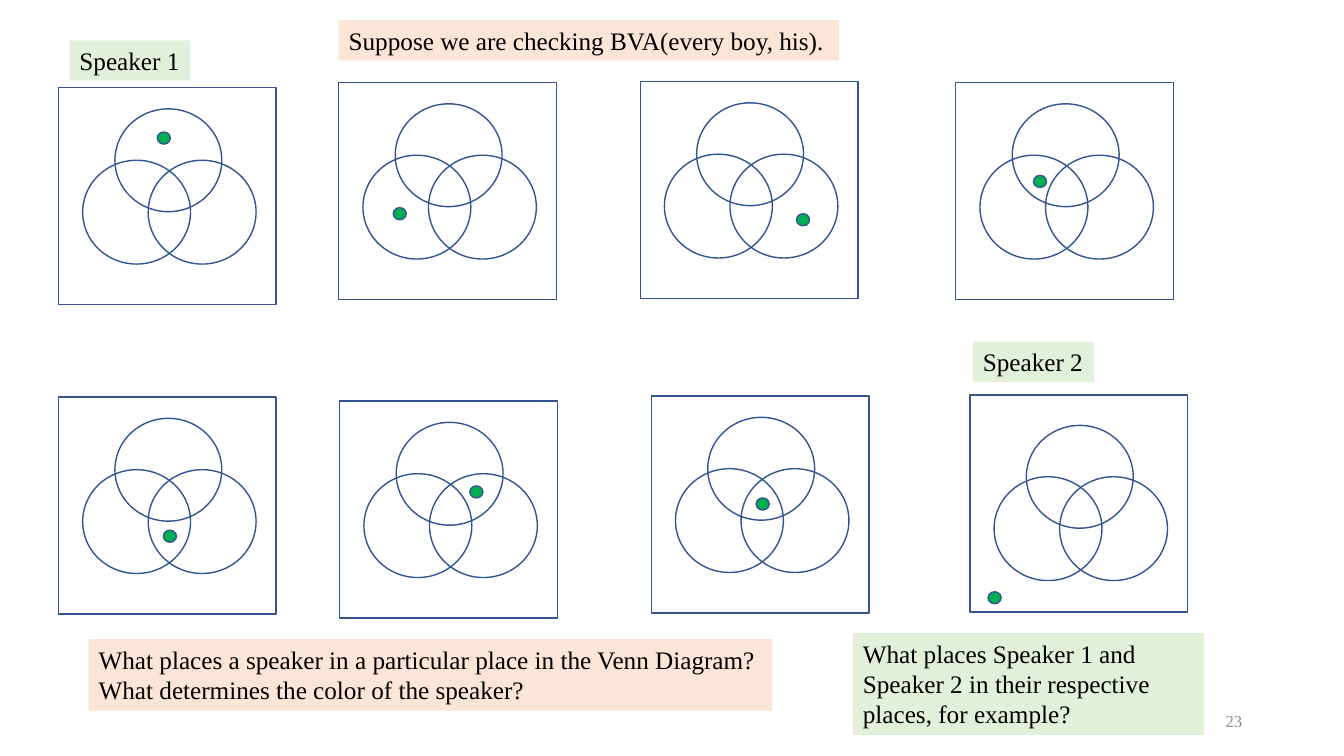
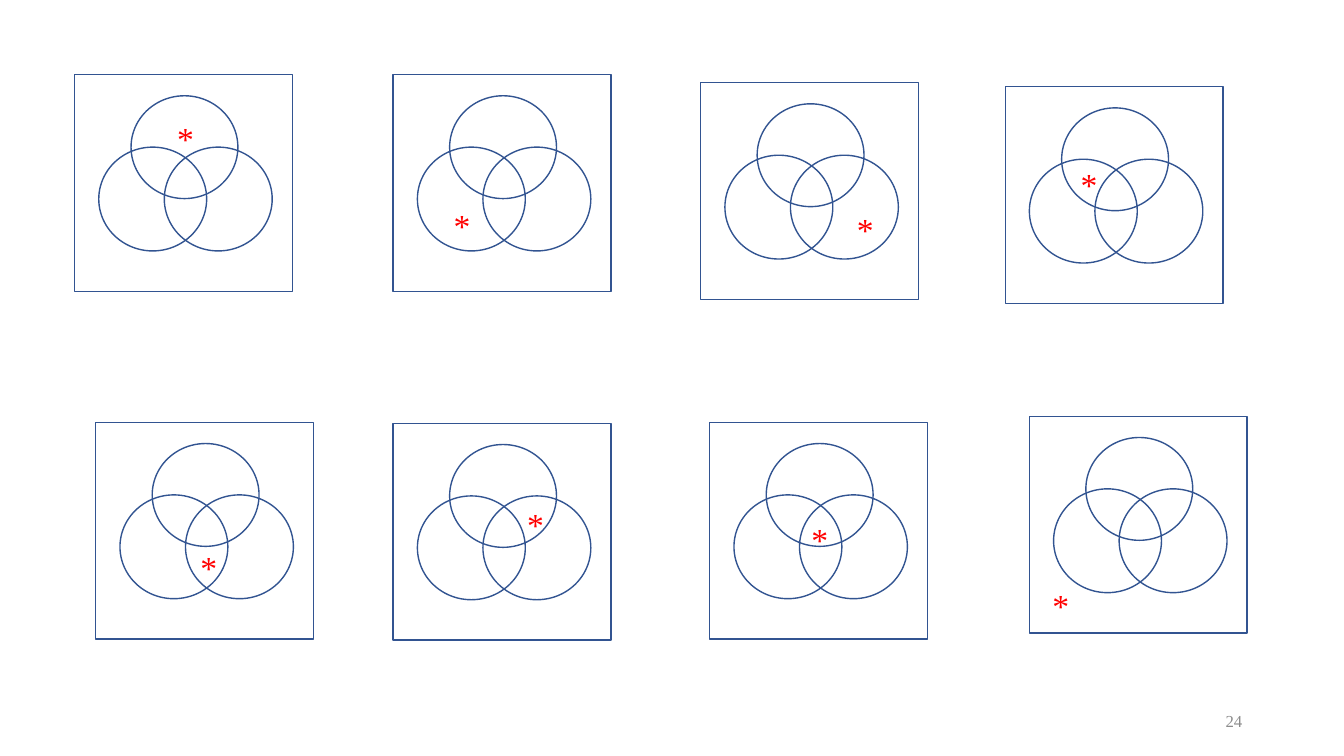
from pptx import Presentation
from pptx.dml.color import RGBColor
from pptx.enum import shapes, text
from pptx.util import Inches, Pt

COLOURS = {
    "outline": "325491",
    "dot": "00B050",
    "star": "FF0000",
    "ink": "000000",
    "number": "8C8C8C",
    "peach": "FBE5D6",
    "mint": "E2F0D9",
}
FONT = "Times New Roman"
FRAME_SIZE = (2.16, 2.15)
CIRCLES = [(0.24, 0.72, 1.07, 1.03), (0.56, 0.21, 1.06, 1.02), (0.89, 0.72, 1.07, 1.03)]
DOT_SIZE = (0.13, 0.12)
STAR_SIZE = (0.37, 0.5)


def add_outline(parent, preset, box, fill=None):
    outline = parent.add_shape(preset, *map(Inches, box))
    outline.shadow.inherit = False
    outline.line.color.rgb = RGBColor.from_string(COLOURS["outline"])
    outline.line.width = Pt(1)
    if fill:
        outline.fill.solid()
        outline.fill.fore_color.rgb = RGBColor.from_string(COLOURS[fill])
    else:
        outline.fill.background()


def add_words(slide, words, box, size, colour, fill=None, wrap=False):
    label = slide.shapes.add_textbox(*map(Inches, box))
    if fill:
        label.fill.solid()
        label.fill.fore_color.rgb = RGBColor.from_string(COLOURS[fill])
    frame = label.text_frame
    frame.text = words
    frame.word_wrap = wrap
    frame.auto_size = text.MSO_AUTO_SIZE.SHAPE_TO_FIT_TEXT
    for paragraph in frame.paragraphs:
        for run in paragraph.runs:
            run.font.name = FONT
            run.font.size = Pt(size)
            run.font.color.rgb = RGBColor.from_string(COLOURS[colour])
    return frame


# Each diagram: frame corner, mark corner, circle shift
pages = [
    ("23", "dot", [
        ((0.58, 0.87), (1.56, 1.31), 0),
        ((3.36, 0.82), (3.9, 2.06), 0),
        ((6.35, 0.81), (7.9, 2.12), 0),
        ((9.48, 0.82), (10.25, 1.74), 0),
        ((0.58, 3.94), (1.62, 5.26), 0),
        ((3.37, 3.98), (4.66, 4.82), 0),
        ((6.46, 3.93), (7.5, 4.94), 0),
        ((9.62, 3.92), (9.8, 5.87), 0.09),
    ], [
        ("What places a speaker in a particular place in the Venn Diagram?\n"
         "What determines the color of the speaker?", (0.88, 6.34, 6.78, 0.71), "peach", False),
        ("Suppose we are checking BVA(every boy, his).", (3.36, 0.2, 4.96, 0.4), "peach", False),
        ("Speaker 2", (9.65, 3.39, 1.2, 0.4), "mint", False),
        ("Speaker 1", (0.69, 0.4, 1.2, 0.4), "mint", False),
        ("What places Speaker 1 and Speaker 2 in their respective places, for example?",
         (8.46, 6.28, 3.48, 1.01), "mint", True),
    ]),
    ("24", "star", [
        ((0.74, 0.74), (1.66, 1.12), 0),
        ((3.9, 0.74), (4.4, 1.98), 0),
        ((6.95, 0.82), (8.4, 2.02), 0),
        ((9.97, 0.86), (10.62, 1.58), 0),
        ((0.95, 4.19), (1.89, 5.38), 0),
        ((3.9, 4.2), (5.13, 4.95), 0),
        ((7.04, 4.19), (7.95, 5.1), 0),
        ((10.21, 4.13), (10.34, 5.75), 0),
    ], []),
]

prs = Presentation()
prs.slide_width, prs.slide_height = Inches(13.33), Inches(7.5)

for number, mark, diagrams, remarks in pages:
    slide = prs.slides.add_slide(prs.slide_layouts[6])

    for (left, top), corner, shift in diagrams:
        if mark == "dot":
            add_outline(slide.shapes, shapes.MSO_SHAPE.OVAL, corner + DOT_SIZE, "dot")
        else:
            add_words(slide, "*", corner + STAR_SIZE, 24, "star")
        venn = slide.shapes.add_group_shape().shapes
        add_outline(venn, shapes.MSO_SHAPE.RECTANGLE, (left, top) + FRAME_SIZE)
        for dx, dy, width, height in CIRCLES:
            add_outline(venn, shapes.MSO_SHAPE.OVAL, (left + dx, top + dy + shift, width, height))

    for words, box, fill, wrap in remarks:
        add_words(slide, words, box, 18, "ink", fill, wrap)

    page_number = add_words(slide, number, (9.42, 6.95, 3, 0.4), 12, "number", wrap=True)
    page_number.auto_size = text.MSO_AUTO_SIZE.NONE
    page_number.vertical_anchor = text.MSO_ANCHOR.MIDDLE
    page_number.paragraphs[0].alignment = text.PP_ALIGN.RIGHT

prs.save("out.pptx")
